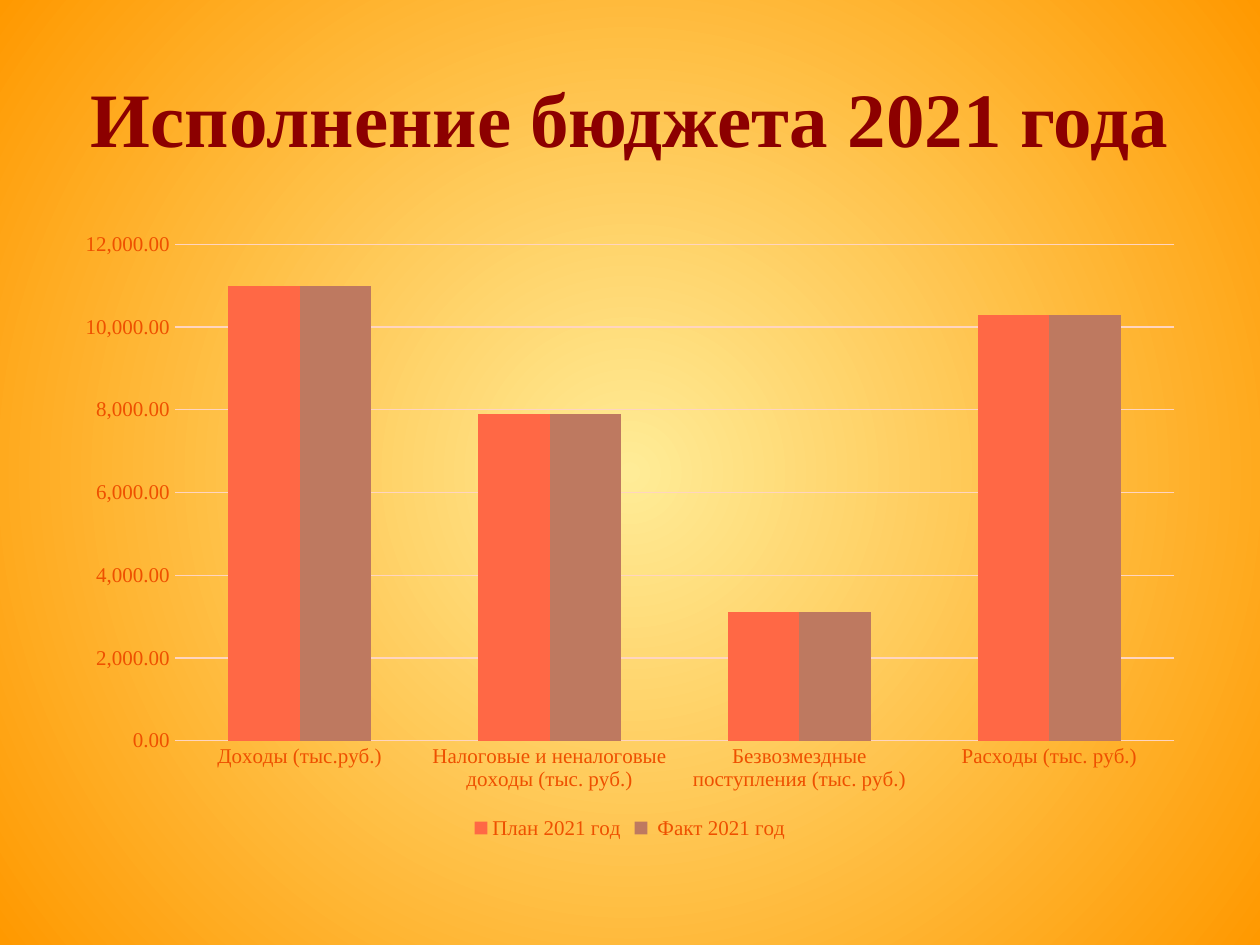
from lxml import etree
from pptx import Presentation
from pptx.chart.data import CategoryChartData
from pptx.dml.color import RGBColor
from pptx.enum import chart as ch, text
from pptx.oxml.ns import qn
from pptx.util import Cm, Pt

FONT = "Times New Roman"
GLOW = RGBColor(0xFF, 0xEC, 0x97)
AMBER = RGBColor(0xFF, 0x99, 0x00)
MAROON = RGBColor(0x8C, 0x00, 0x00)
BROWN = RGBColor(0x5C, 0x1F, 0x00)
ORANGE = RGBColor(0xEE, 0x50, 0x00)
GRID = RGBColor(0xFF, 0xD5, 0xC0)
PLAN = RGBColor(0xFF, 0x68, 0x45)
FACT = RGBColor(0xBE, 0x79, 0x60)

CATEGORIES = ["Доходы (тыс.руб.)", "Налоговые и неналоговые доходы (тыс. руб.)",
              "Безвозмездные поступления (тыс. руб.)", "Расходы (тыс. руб.)"]
SERIES = [("План 2021 год", PLAN, (11000, 7900, 3100, 10300)),
          (" Факт 2021 год", FACT, (11000, 7900, 3100, 10300))]


def style_font(font, size, color, bold=False):
    font.name, font.size, font.bold = FONT, Pt(size), bold
    font.color.rgb = color


def add_text(s, box, content, size, color, bold=False):
    tf = s.shapes.add_textbox(*box).text_frame
    tf.word_wrap = True
    tf.vertical_anchor = text.MSO_ANCHOR.MIDDLE
    p = tf.paragraphs[0]
    p.alignment = text.PP_ALIGN.CENTER
    r = p.add_run()
    r.text = content
    style_font(r.font, size, color, bold)


def paint_background(s):
    fill = s.background.fill
    fill.gradient()
    for stop, color in zip(fill.gradient_stops, (GLOW, AMBER)):
        stop.color.rgb = color
    # Radial gradient from the centre of the slide
    grad = next(s.element.iter(qn("a:gradFill")))
    for lin in grad.findall(qn("a:lin")):
        grad.remove(lin)
    radial = etree.SubElement(grad, qn("a:path"))
    radial.set("path", "circle")
    centre = etree.SubElement(radial, qn("a:fillToRect"))
    for side in "ltrb":
        centre.set(side, "50000")


def add_budget_chart(s, box):
    data = CategoryChartData(number_format="#,##0.00")
    data.categories = CATEGORIES
    for name, _, values in SERIES:
        data.add_series(name, values)
    chart = s.shapes.add_chart(ch.XL_CHART_TYPE.COLUMN_CLUSTERED, *box, data).chart
    style_font(chart.font, 10, BROWN)
    chart.has_title = False

    # Columns
    plot = chart.plots[0]
    plot.gap_width, plot.overlap, plot.vary_by_categories = 150, 0, False
    for series, (_, color, _) in zip(plot.series, SERIES):
        series.format.fill.solid()
        series.format.fill.fore_color.rgb = color

    # Axes
    for axis in (chart.category_axis, chart.value_axis):
        axis.major_tick_mark = axis.minor_tick_mark = ch.XL_TICK_MARK.NONE
        axis.format.line.fill.background()
        style_font(axis.tick_labels.font, 12, ORANGE)
    axis = chart.value_axis
    axis.minimum_scale, axis.maximum_scale, axis.major_unit = 0, 12000, 2000
    axis.tick_labels.number_format = "#,##0.00"
    axis.tick_labels.number_format_is_linked = False
    axis.has_major_gridlines = True
    axis.major_gridlines.format.line.color.rgb = GRID
    axis.major_gridlines.format.line.width = Pt(0.75)

    # Legend
    chart.has_legend = True
    chart.legend.position = ch.XL_LEGEND_POSITION.BOTTOM
    chart.legend.include_in_layout = False
    style_font(chart.legend.font, 12, ORANGE)


def main():
    prs = Presentation()
    prs.slide_width, prs.slide_height = Cm(25.4), Cm(19.05)
    s = prs.slides.add_slide(prs.slide_layouts[6])
    paint_background(s)
    left, width = Cm(1.27), Cm(22.86)
    add_text(s, (left, Cm(0.76), width, Cm(3.18)),
             "Исполнение бюджета 2021 года", 44, MAROON, bold=True)
    add_budget_chart(s, (left, Cm(4.45), width, Cm(12.57)))
    prs.save("out.pptx")


if __name__ == "__main__":
    main()
